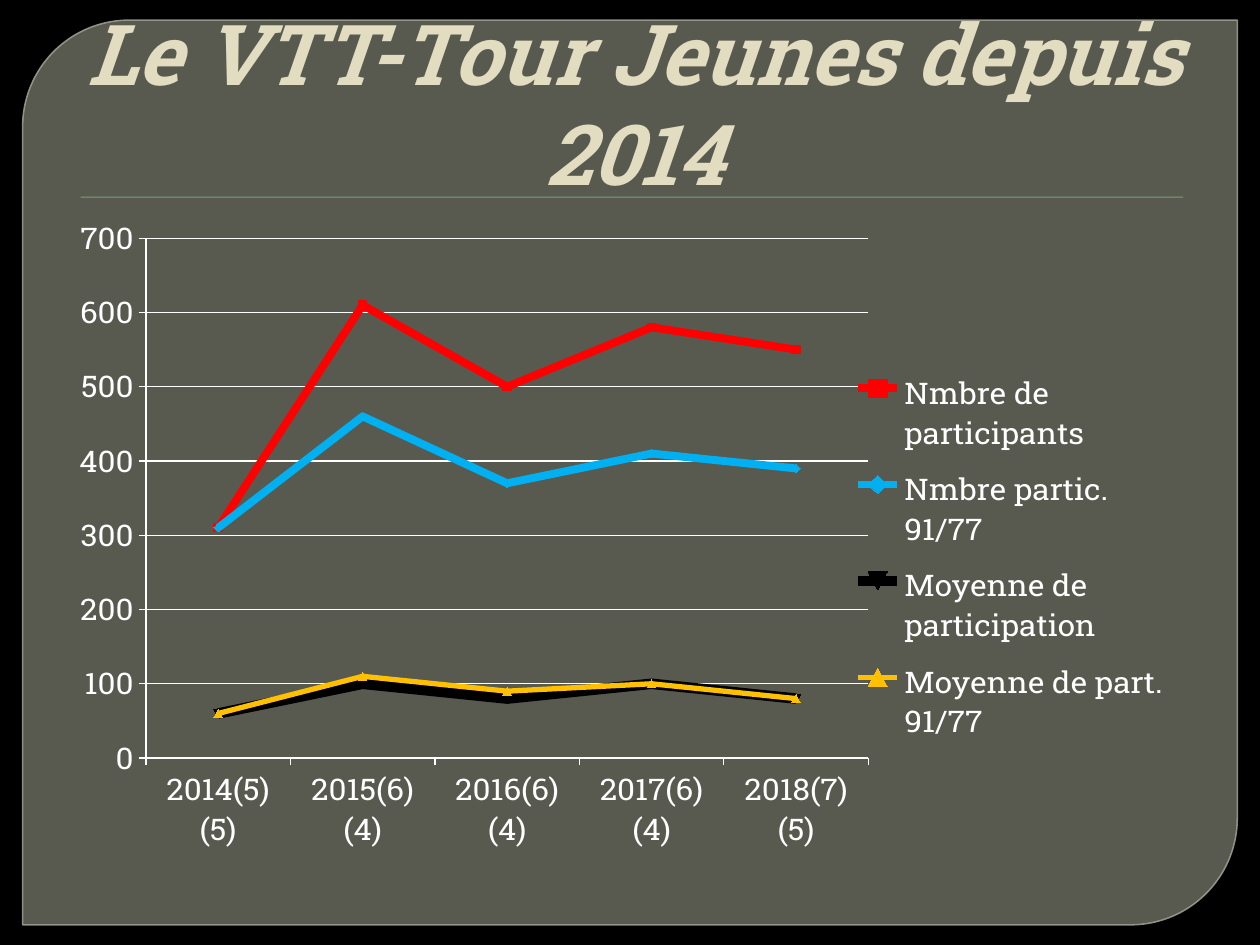
from pptx import Presentation
from pptx.chart.data import CategoryChartData as Data
from pptx.dml.color import RGBColor as Rgb
from pptx.enum.chart import XL_CHART_TYPE as Kind, XL_LEGEND_POSITION as Side, XL_TICK_MARK as Tick
from pptx.enum.shapes import MSO_SHAPE as Shape
from pptx.enum.text import MSO_ANCHOR as Anchor, MSO_AUTO_SIZE as Fit, PP_ALIGN as Align
from pptx.oxml import parse_xml
from pptx.oxml.ns import nsdecls, qn
from pptx.util import Inches, Pt

WIDE, HIGH = 10, 7.5
FONT = "Roboto Slab"
HUES = {"back": "000000", "panel": "888B7B", "edge": "9DA090", "rule": "72A376",
        "title": "E2DCC1", "text": "FFFFFF", "red": "FF0000", "blue": "00B0F0",
        "black": "000000", "gold": "FFC000"}
YEARS = ["2014(5)(5)", "2015(6)(4)", "2016(6)(4)", "2017(6)(4)", "2018(7)(5)"]
ROWS = [("Nmbre de participants", (310, 610, 500, 580, 550), "red", 4.5),
        ("Nmbre partic. 91/77", (310, 460, 370, 410, 390), "blue", 4.5),
        ("Moyenne de participation", (60, 100, 80, 100, 80), "black", 6),
        ("Moyenne de part. 91/77", (60, 110, 90, 100, 80), "gold", 3)]


def hue(name):
    """Return a named colour."""
    return Rgb.from_string(HUES[name])


def box(*area):
    """Turn inches into a position and size."""
    return [Inches(n) for n in area]


def paint(fill, name, alpha=100):
    """Fill with a colour at a given opacity in percent."""
    fill.solid()
    fill.fore_color.rgb = hue(name)
    if alpha < 100:
        node = fill._xPr.find(qn("a:solidFill"))[0]
        node.append(parse_xml(f'<a:alpha {nsdecls("a")} val="{alpha * 1000}"/>'))


def add_panel(slide):
    """Add the backdrop with two rounded corners."""
    edge = 0.018 * WIDE
    shape = slide.shapes.add_shape(Shape.ROUND_2_DIAG_RECTANGLE,
                                   *box(edge, 0.16, WIDE - 2 * edge, 7.18))
    shape.adjustments[0], shape.adjustments[1] = 0.118, 0
    shape.shadow.inherit = False
    paint(shape.fill, "panel", 65)
    shape.line.width = Pt(0.87)
    paint(shape.line.fill, "edge", 88)


def add_rule(slide):
    """Add the thin bar below the title."""
    shape = slide.shapes.add_shape(Shape.RECTANGLE, *box(0.64, 1.56, 8.75, 0.01))
    shape.shadow.inherit = False
    paint(shape.fill, "rule")
    shape.line.fill.background()


def set_title(slide, text):
    """Place and format the title above the backdrop."""
    title = slide.shapes.title
    title.left, title.top, title.width, title.height = box(0.51, 0, 9, 1.66)
    slide.shapes._spTree.append(title._element)
    frame = title.text_frame
    frame.text = text
    frame.auto_size, frame.word_wrap = Fit.NONE, True
    frame.vertical_anchor = Anchor.BOTTOM
    para = frame.paragraphs[0]
    para.alignment = Align.CENTER
    para._p.get_or_add_pPr().set("marL", str(Inches(0.06)))
    font = para.font
    font.name, font.size = FONT, Pt(48)
    font.bold = font.italic = True
    font.color.rgb = hue("title")


def place(part, shares, inner=False):
    """Fix a chart part at shares of the chart's size."""
    old = part.find(qn("c:layout"))
    if old is not None:
        part.remove(old)
    rows = '<c:layoutTarget val="inner"/>' if inner else ""
    rows += '<c:xMode val="edge"/><c:yMode val="edge"/>'
    rows += "".join(f'<c:{key} val="{val}"/>' for key, val in zip("xywh", shares))
    node = parse_xml(f'<c:layout {nsdecls("c")}><c:manualLayout>{rows}</c:manualLayout></c:layout>')
    part.insert(0 if inner else 1, node)


def set_axis(axis, grid):
    """Format an axis and its gridlines."""
    axis.major_tick_mark, axis.minor_tick_mark = Tick.OUTSIDE, Tick.NONE
    axis.has_major_gridlines = grid
    lines = [axis.format.line]
    if grid:
        lines.append(axis.major_gridlines.format.line)
    for line in lines:
        line.width = Pt(0.75)
        line.color.rgb = hue("text")


def add_lines(slide):
    """Add the line chart with its legend."""
    data = Data()
    data.categories = YEARS
    for name, vals, _, _ in ROWS:
        data.add_series(name, vals)
    chart = slide.shapes.add_chart(Kind.LINE_MARKERS, *box(0.59, 1.62, 8.74, 5.12), data).chart
    chart.has_title = False
    chart.font.name, chart.font.size = FONT, Pt(18)
    chart.font.color.rgb = hue("text")
    set_axis(chart.category_axis, False)
    axis = chart.value_axis
    set_axis(axis, True)
    axis.minimum_scale, axis.maximum_scale, axis.major_unit = 0, 700, 100
    plot = chart.plots[0]
    plot.vary_by_categories = False
    for item, (_, _, name, size) in zip(plot.series, ROWS):
        item.smooth = False
        item.format.line.width = Pt(size)
        item.format.line.color.rgb = hue(name)
        item.marker.size = 5
        paint(item.marker.format.fill, name)
        paint(item.marker.format.line.fill, name)
    chart.has_legend = True
    key = chart.legend
    key.position, key.include_in_layout = Side.RIGHT, False
    place(key._element, (0.7, 0.25, 0.3, 0.66))
    place(chart._chartSpace.chart.plotArea, (0.065, 0.056, 0.656, 0.853), True)


def main():
    """Build the slide and save it."""
    deck = Presentation()
    deck.slide_width, deck.slide_height = box(WIDE, HIGH)
    slide = deck.slides.add_slide(deck.slide_layouts[5])
    paint(slide.background.fill, "back")
    add_panel(slide)
    add_rule(slide)
    set_title(slide, "Le VTT-Tour Jeunes depuis 2014")
    add_lines(slide)
    deck.save("out.pptx")


if __name__ == "__main__":
    main()
